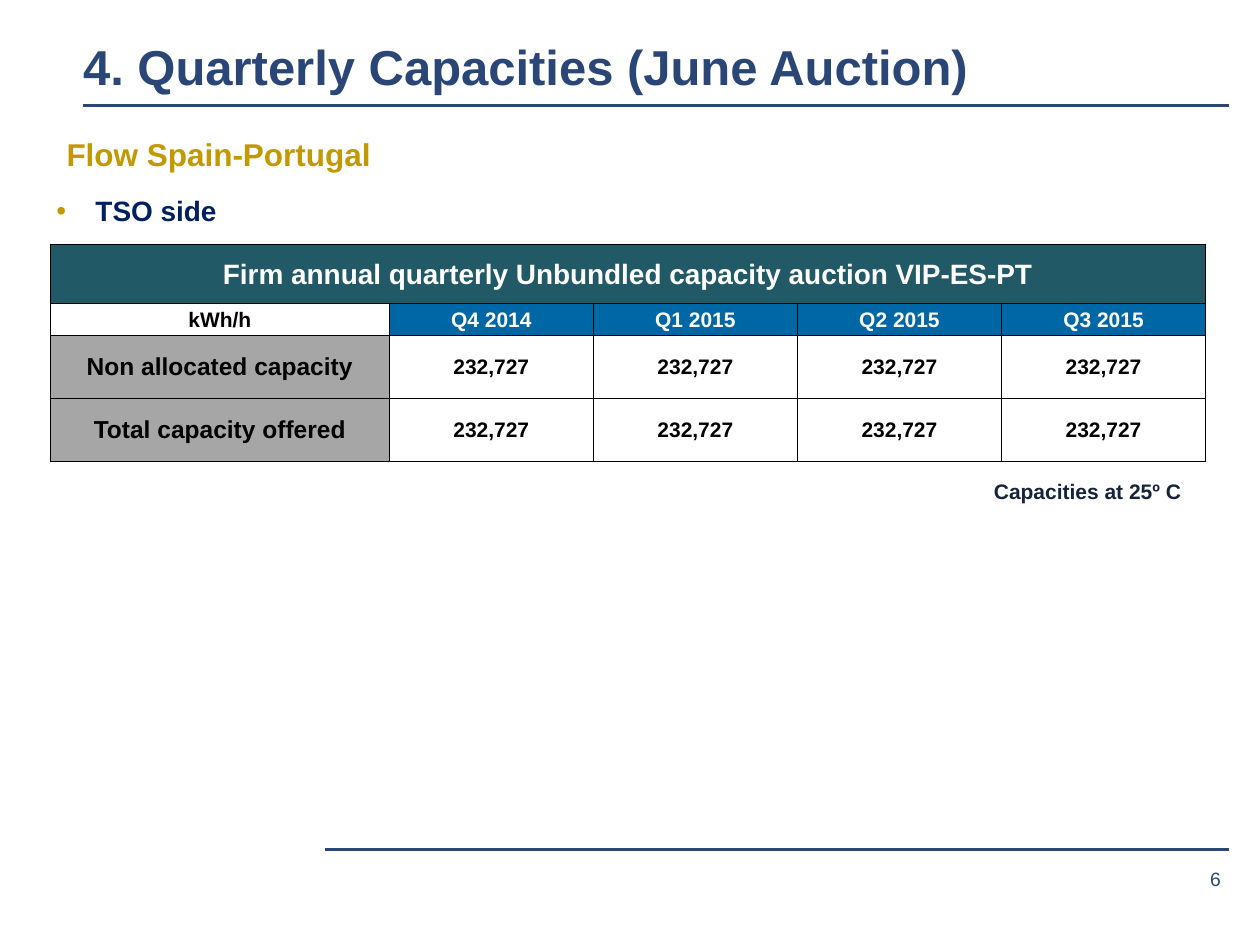
from lxml import etree
from pptx import Presentation, util as u
from pptx.dml.color import RGBColor
from pptx.enum import shapes, text
from pptx.oxml import parse_xml
from pptx.oxml.ns import nsdecls, qn

NAVY = "2A4677"
GOLD = "C29903"
WHITE = "FFFFFF"
BLACK = "000000"
BLUE = "0067A6"
TEAL = "215967"
GREY = "A6A6A6"
QUARTERS = ["Q4 2014", "Q1 2015", "Q2 2015", "Q3 2015"]
CAPACITY_ROWS = {
    "Non allocated capacity": ["232,727"] * 4,
    "Total capacity offered": ["232,727"] * 4,
}
ROW_HEIGHTS = [0.47, 0.25, 0.5, 0.5]
COLUMN_WIDTHS = [2.69] + [1.62] * 4


def color(value):
    """Turn a hex string into a colour."""
    return RGBColor.from_string(value)


def apply_format(target, values):
    """Set each named attribute of the target."""
    for name, value in values.items():
        setattr(target, name, value)


def style_text(paragraph, wording, size, hex_color, bold=True, align="LEFT"):
    """Write one paragraph in Arial."""
    paragraph.text = wording
    paragraph.alignment = getattr(text.PP_ALIGN, align)
    font = paragraph.font
    apply_format(font, {"name": "Arial", "size": u.Pt(size), "bold": bold})
    font.color.rgb = color(hex_color)


def add_text(slide, box, wording, size, hex_color, wrap=True, bold=True,
             align="LEFT", anchor="TOP", inset=None, space_after=0, bullet=None):
    """Add a text box holding one paragraph."""
    shape = slide.shapes.add_textbox(*map(u.Inches, box))
    frame = shape.text_frame
    apply_format(frame, {"word_wrap": wrap,
                         "vertical_anchor": getattr(text.MSO_ANCHOR, anchor)})
    if inset is not None:
        sides = ("margin_left", "margin_top", "margin_right", "margin_bottom")
        apply_format(frame, dict.fromkeys(sides, u.Inches(inset)))
    paragraph = frame.paragraphs[0]
    if bullet:
        add_bullet(paragraph, bullet, 0.31)
    style_text(paragraph, wording, size, hex_color, bold, align)
    paragraph.space_after = u.Pt(space_after)


def add_bullet(paragraph, hex_color, indent):
    """Give a paragraph a coloured bullet with a hanging indent."""
    properties = paragraph._p.get_or_add_pPr()
    properties.set("marL", str(u.Inches(indent)))
    properties.set("indent", str(-u.Inches(indent)))
    bullet_color = etree.SubElement(properties, qn("a:buClr"))
    etree.SubElement(bullet_color, qn("a:srgbClr"), val=hex_color)
    etree.SubElement(properties, qn("a:buFont"), typeface="Arial")
    etree.SubElement(properties, qn("a:buChar"), char="•")


def add_rule(slide, left, right, top):
    """Draw a horizontal navy rule."""
    ends = map(u.Inches, (left, top, right, top))
    rule = slide.shapes.add_connector(shapes.MSO_CONNECTOR.STRAIGHT, *ends)
    rule.line.color.rgb = color(NAVY)
    rule.line.width = u.Pt(1.5)
    etree.SubElement(rule._element.spPr, qn("a:effectLst"))


def add_borders(cell):
    """Draw thin black lines on all four sides of a cell."""
    properties = cell._tc.get_or_add_tcPr()
    for position, side in enumerate(("lnL", "lnR", "lnT", "lnB")):
        properties.insert(position, parse_xml(
            f'<a:{side} {nsdecls("a")} w="{u.Pt(0.5)}"><a:solidFill>'
            f'<a:srgbClr val="{BLACK}"/></a:solidFill></a:{side}>'))


def fill_cell(cell, wording, size, hex_color, fill):
    """Write, fill and outline one table cell."""
    margin = u.Inches(0.01)
    apply_format(cell, {"margin_left": margin, "margin_right": margin,
                        "margin_top": margin, "margin_bottom": 0,
                        "vertical_anchor": text.MSO_ANCHOR.MIDDLE})
    style_text(cell.text_frame.paragraphs[0], wording, size, hex_color, align="CENTER")
    cell.fill.solid()
    cell.fill.fore_color.rgb = color(fill)
    add_borders(cell)


def add_capacity_table(slide):
    """Add the table of quarterly capacities."""
    box = (0.4, 1.94, sum(COLUMN_WIDTHS), sum(ROW_HEIGHTS))
    table = slide.shapes.add_table(
        len(ROW_HEIGHTS), len(COLUMN_WIDTHS), *map(u.Inches, box)).table
    for column, width in zip(table.columns, COLUMN_WIDTHS):
        column.width = u.Inches(width)
    for row, height in zip(table.rows, ROW_HEIGHTS):
        row.height = u.Inches(height)

    heading = "Firm annual quarterly Unbundled capacity auction VIP-ES-PT"
    for index in range(len(COLUMN_WIDTHS)):
        fill_cell(table.cell(0, index), "" if index else heading, 16, WHITE, TEAL)
    table.cell(0, 0).merge(table.cell(0, len(COLUMN_WIDTHS) - 1))

    fill_cell(table.cell(1, 0), "kWh/h", 12, BLACK, WHITE)
    for index, quarter in enumerate(QUARTERS, 1):
        fill_cell(table.cell(1, index), quarter, 12, WHITE, BLUE)
    for row, (label, capacities) in enumerate(CAPACITY_ROWS.items(), 2):
        fill_cell(table.cell(row, 0), label, 14, BLACK, GREY)
        for index, capacity in enumerate(capacities, 1):
            fill_cell(table.cell(row, index), capacity, 12, BLACK, WHITE)


def main():
    """Build the quarterly capacities slide."""
    presentation = Presentation()
    apply_format(presentation, {"slide_width": u.Inches(10),
                                "slide_height": u.Inches(7.5)})
    slide = presentation.slides.add_slide(presentation.slide_layouts[6])
    add_rule(slide, 0.66, 9.75, 0.84)
    add_rule(slide, 2.58, 9.75, 6.74)
    add_text(slide, (8.94, 6.82, 0.75, 0.31), "6", 11, NAVY, bold=False,
             align="RIGHT", anchor="MIDDLE", inset=0)
    add_capacity_table(slide)
    add_text(slide, (0.43, 1.02, 5.2, 0.4), "Flow Spain-Portugal", 18, GOLD,
             space_after=6)
    add_text(slide, (0.66, 0.36, 9.11, 0.4), "4. Quarterly Capacities (June Auction)",
             28, NAVY, anchor="BOTTOM", inset=0)
    add_text(slide, (7.79, 3.75, 1.7, 0.3), "Capacities at 25º C", 12, "15233C",
             wrap=False)
    add_text(slide, (0.35, 1.49, 1.97, 0.37), "TSO side", 16, "002060",
             align="JUSTIFY", space_after=6, bullet=GOLD)
    presentation.save("out.pptx")


if __name__ == "__main__":
    main()
